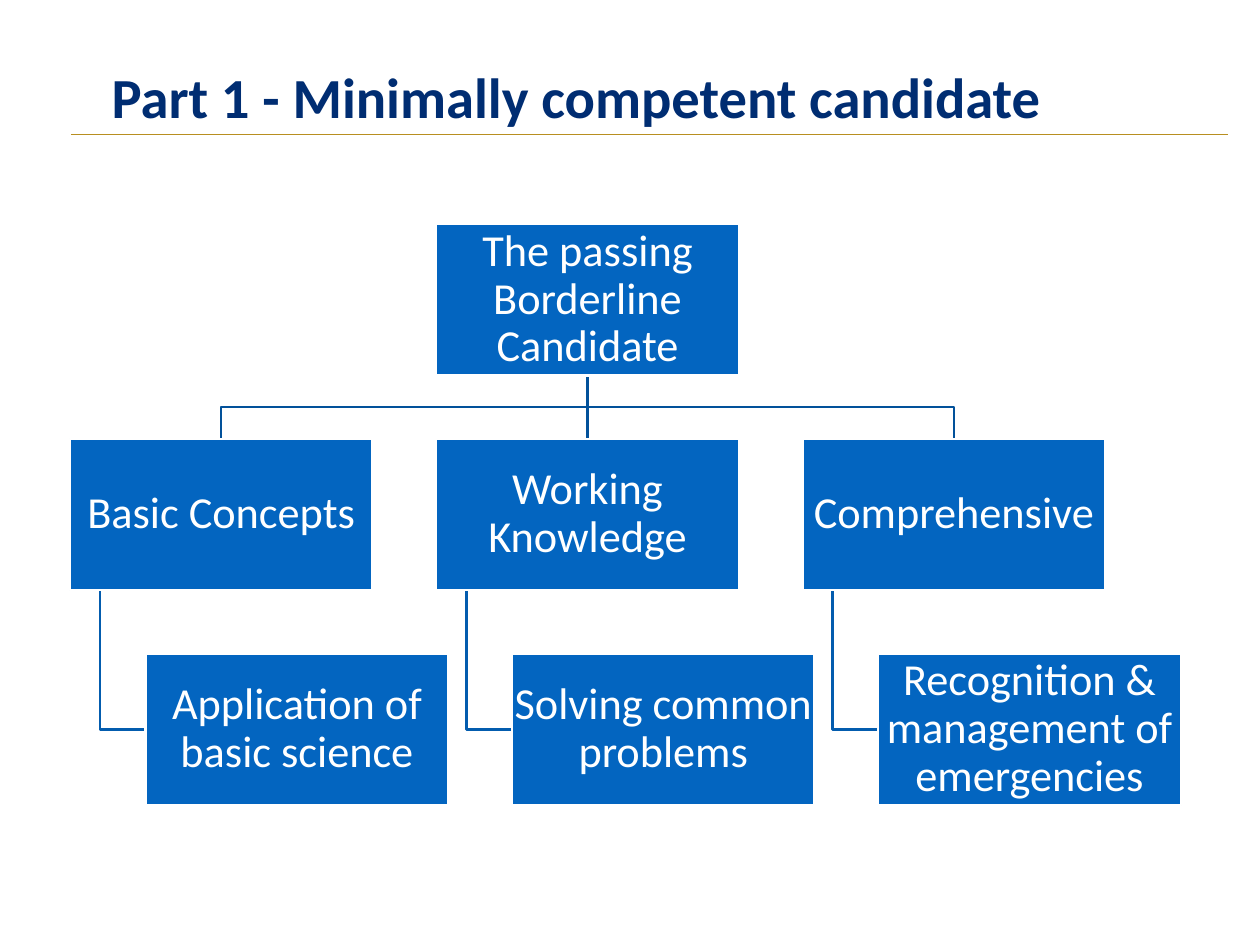
from dataclasses import dataclass

from lxml import etree
from pptx import Presentation
from pptx.dml.color import RGBColor
from pptx.enum import shapes as kinds, text as txt
from pptx.oxml import ns
from pptx.util import Pt

HUES = {
    "navy": "002D72",
    "gold": "B88F20",
    "box": "0365C0",
    "trunk": "02519A",
    "stem": "035CAE",
    "white": "FFFFFF",
}
FONT = "Calibri"
WIDE, HIGH = 246.2, 123.1
LEFT, TOP = 56.7, 182
COL, ROW = 297.7, 174.6


@dataclass
class Box:
    words: str
    x: float
    y: float

    @property
    def mid(self) -> float:
        return self.x + WIDE / 2

    @property
    def end(self) -> float:
        return self.y + HIGH


@dataclass
class Branch:
    topic: str
    task: str


BRANCHES = [
    Branch("Basic Concepts", "Application of basic science"),
    Branch("Working Knowledge", "Solving common problems"),
    Branch("Comprehensive", "Recognition & management of emergencies"),
]


def color(name: str) -> RGBColor:
    return RGBColor.from_string(HUES[name])


def pen(line, hue: str, size: float) -> None:
    line.color.rgb = color(hue)
    line.width = Pt(size)


def write(frame, words: str, size: float, hue: str, inset: float,
          space: float, anchor, bold: bool = False) -> None:
    frame.word_wrap = True
    frame.vertical_anchor = anchor
    frame.margin_left = frame.margin_right = Pt(inset)
    frame.margin_top = frame.margin_bottom = Pt(inset)
    para = frame.paragraphs[0]
    para.text = words
    para.alignment = txt.PP_ALIGN.CENTER
    para.line_spacing = space
    para.font.name = FONT
    para.font.size = Pt(size)
    para.font.bold = bold
    para.font.color.rgb = color(hue)


def rule(slide, x1: float, y1: float, x2: float, y2: float,
         hue: str, size: float) -> None:
    line = slide.shapes.add_connector(
        kinds.MSO_CONNECTOR.STRAIGHT, Pt(x1), Pt(y1), Pt(x2), Pt(y2))
    pen(line.line, hue, size)
    etree.SubElement(line.element.spPr, ns.qn("a:effectLst"))


def elbow(slide, spots: list[tuple[float, float]], hue: str) -> None:
    pts = [(Pt(x), Pt(y)) for x, y in spots]
    maker = slide.shapes.build_freeform(*pts[0])
    maker.add_line_segments(pts[1:], close=False)
    shape = maker.convert_to_shape()
    shape.shadow.inherit = False
    shape.fill.background()
    pen(shape.line, hue, 2)


def draw(slide, box: Box) -> None:
    shape = slide.shapes.add_shape(
        kinds.MSO_SHAPE.RECTANGLE, Pt(box.x), Pt(box.y), Pt(WIDE), Pt(HIGH))
    shape.shadow.inherit = False
    shape.fill.solid()
    shape.fill.fore_color.rgb = color("box")
    pen(shape.line, "white", 2)
    write(shape.text_frame, box.words, 36, "white", 2, 0.9,
          txt.MSO_ANCHOR.MIDDLE)


def main() -> None:
    deck = Presentation()
    deck.slide_width, deck.slide_height = Pt(1024), Pt(768)
    slide = deck.slides.add_slide(deck.slide_layouts[6])

    rule(slide, 57.6, 109.4, 998, 109.4, "gold", 1)
    title = slide.shapes.add_textbox(Pt(56), Pt(-26.6), Pt(824), Pt(131.8))
    write(title.text_frame, "Part 1 - Minimally competent candidate", 46,
          "navy", 0, 0.8, txt.MSO_ANCHOR.BOTTOM, True)

    root = Box("The passing Borderline Candidate", LEFT + COL, TOP)
    boxes = [root]
    for i, branch in enumerate(BRANCHES):
        topic = Box(branch.topic, LEFT + i * COL, TOP + ROW)
        task = Box(branch.task, topic.x + WIDE / 4, TOP + 2 * ROW)
        boxes += [topic, task]

        if topic.x == root.x:
            rule(slide, root.mid, root.end, topic.mid, topic.y, "trunk", 2)
        else:
            bend = (root.end + topic.y) / 2
            elbow(slide, [(root.mid, root.end), (root.mid, bend),
                          (topic.mid, bend), (topic.mid, topic.y)], "trunk")
        stem, level = topic.x + WIDE / 10, task.y + HIGH / 2
        elbow(slide, [(stem, topic.end), (stem, level), (task.x, level)],
              "stem")

    for box in boxes:
        draw(slide, box)
    deck.save("out.pptx")


if __name__ == "__main__":
    main()
